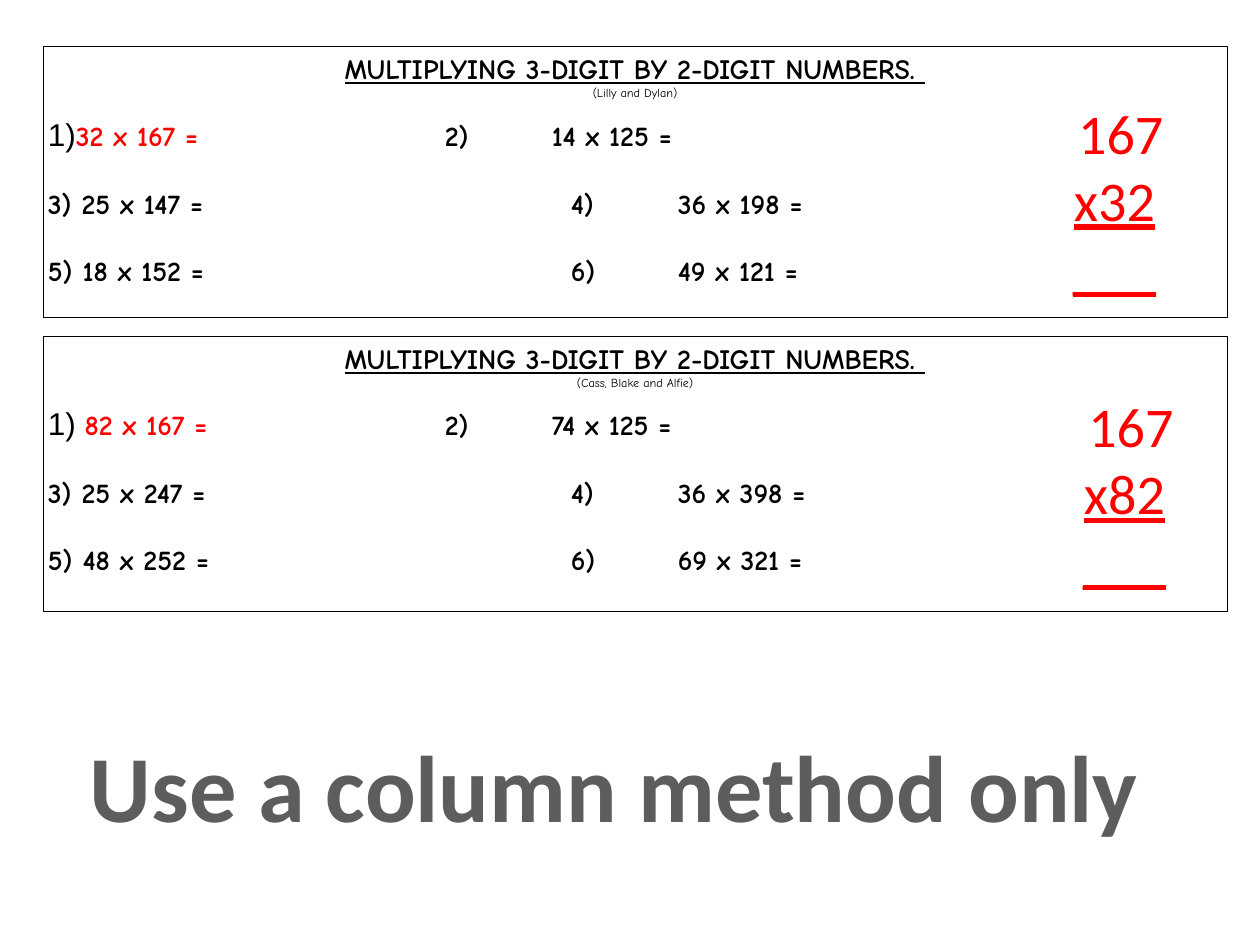
"""Build a worksheet slide on multiplying 3-digit by 2-digit numbers."""
from lxml.etree import SubElement as Sub
from pptx import Presentation
from pptx.dml.color import RGBColor as RGB
from pptx.enum.shapes import MSO_SHAPE as Shape
from pptx.enum.text import MSO_ANCHOR as Anchor, PP_ALIGN as Align
from pptx.oxml.ns import qn
from pptx.util import Inches, Pt


def style(run, size, color="000000", bold=False, under=False, face="Comic Neue"):
    font = run.font
    font.size, font.bold, font.underline, font.name = Pt(size), bold, under, face
    font.color.rgb = RGB.from_string(color)


def tabs(para, *stops):
    group = Sub(para._p.get_or_add_pPr(), qn("a:tabLst"))
    for stop in stops:
        Sub(group, qn("a:tab"), pos=str(Inches(stop)), algn="l")


RED = "FF0000"
TITLE = "MULTIPLYING 3-DIGIT BY 2-DIGIT NUMBERS. "
cards = [
    (0.37, 2.15, "(Lilly and Dylan)", ("1)", "32 x 167 =", "\t2)\t14 x 125 ="),
     ["3) 25 x 147 =\t4)\t36 x 198 =", "5) 18 x 152 =\t6)\t49 x 121 ="],
     (8.2, 0.73), "x32"),
    (2.67, 2.18, "(Cass, Blake and Alfie)", ("1) ", "82 x 167 =", "\t2)\t74 x 125 ="),
     ["3) 25 x 247 =\t4)\t36 x 398 =", "5) 48 x 252 =\t6)\t69 x 321 ="],
     (8.28, 3.06), "x82"),
]

prs = Presentation()
prs.slide_width, prs.slide_height = Inches(10), Inches(7.5)
slide = prs.slides.add_slide(prs.slide_layouts[6])
shapes = slide.shapes

for top, high, names, first, rows, spot, times in cards:
    card = shapes.add_shape(Shape.RECTANGLE, Inches(0.34), Inches(top), Inches(9.4), Inches(high))
    card.shadow.inherit = False
    card.fill.background()
    card.line.color.rgb = RGB.from_string("000000")
    card.line.width = Pt(0.25)
    frame = card.text_frame
    frame.word_wrap = True
    frame.vertical_anchor = Anchor.TOP
    frame.margin_left = frame.margin_right = Inches(0.04)
    frame.margin_top = frame.margin_bottom = Inches(0.04)
    frame.text = "\n".join([TITLE, names, "", *rows])
    head, sub, lead, *rest = frame.paragraphs

    head.alignment = sub.alignment = Align.CENTER
    style(head.runs[0], 16, bold=True, under=True)
    style(sub.runs[0], 7)
    sub.space_after = Pt(8.4)

    for part, size, color, bold, face in zip(
            first, (18, 16, 16), ("000000", RED, "000000"),
            (False, True, True), ("Arial", "Comic Neue", "Comic Neue")):
        run = lead.add_run()
        run.text = part
        style(run, size, color, bold, face=face)
    for para in rest:
        style(para.runs[0], 16, bold=True)
    for para, shift in zip([lead, *rest], (0, 1, 1)):
        para.alignment = Align.LEFT
        para.space_after = Pt(19.2)
        tabs(para, 3.15 + shift, 4 + shift)
    rest[-1].space_after = Pt(0)

for *_, spot, times in cards:
    left, top = spot
    work = shapes.add_textbox(Inches(left), Inches(top), Inches(1.29), Inches(1.72))
    frame = work.text_frame
    frame.word_wrap = True
    frame.text = f" 167\n{times}\n___"
    for para, under in zip(frame.paragraphs, (False, True, True)):
        para.alignment = Align.CENTER
        style(para.runs[0], 32, RED, under=under, face="Calibri")

note = shapes.add_textbox(Inches(0.57), Inches(5.73), Inches(8.61), Inches(1.01))
note.text_frame.word_wrap = False
note.text_frame.text = "Use a column method only"
para = note.text_frame.paragraphs[0]
para.alignment = Align.CENTER
style(para.runs[0], 54, "5D5D5D", bold=True, face="Calibri")

prs.save("out.pptx")
